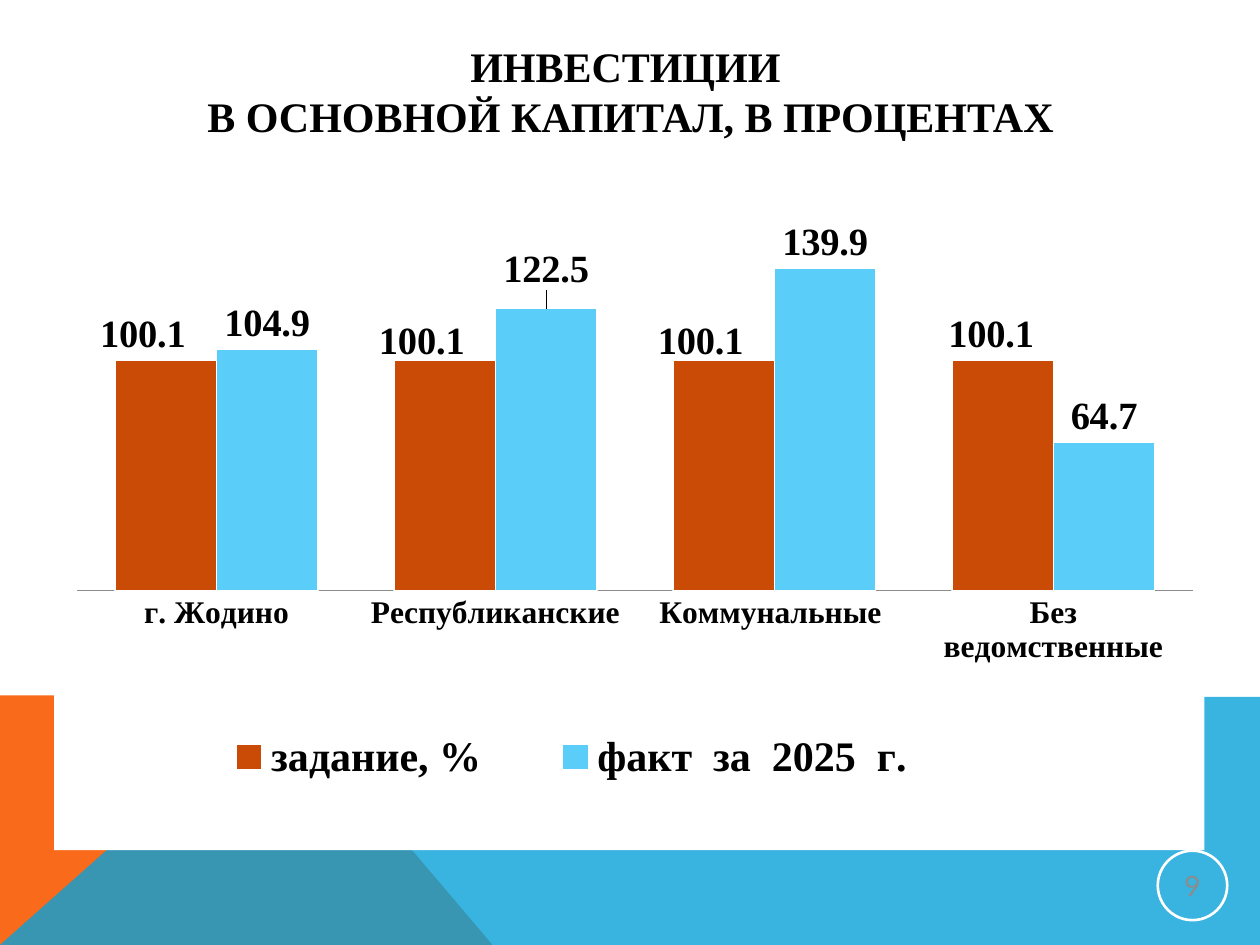
"""Build the slide on investment in fixed capital, target against actual."""
import pptx
import pptx.chart.data
import pptx.dml.color
import pptx.enum.chart
import pptx.enum.shapes
import pptx.enum.text
import pptx.oxml
import pptx.oxml.ns
import pptx.util

Cm, Pt = pptx.util.Cm, pptx.util.Pt
RGB = pptx.dml.color.RGBColor.from_string
COLORS = {"orange": "F96A1B", "blue": "08A1D9", "target": "CA4B05", "actual": "5ACEF9",
          "text": "000000", "white": "FFFFFF", "grey": "8C8C8C"}
SERIF = "Times New Roman"
NS = pptx.oxml.ns.nsdecls("c", "a")


def style(font, size, color="text", name=SERIF, bold=True):
    font.size, font.name, font.bold = Pt(size), name, bold
    font.color.rgb = RGB(COLORS[color])


def layout(x, y, w=None, h=None, target=""):
    tags = [("layoutTarget", target)] if target else []
    if w:
        tags += [("xMode", "edge"), ("yMode", "edge")]
    tags += [(t, v) for t, v in zip("xywh", (x, y, w, h)) if v is not None]
    body = "".join(f'<c:{t} val="{v}"/>' for t, v in tags)
    return pptx.oxml.parse_xml(f"<c:layout {NS}><c:manualLayout>{body}</c:manualLayout></c:layout>")


prs = pptx.Presentation()
prs.slide_width, prs.slide_height = Cm(25.4), Cm(19.05)
s = prs.slides.add_slide(prs.slide_layouts[6])

bands = [
    ("orange", [(0, 19.05), (0, 14.02), (5.66, 14.02), (9.93, 19.05)]),
    ("blue", [(0, 19.05), (5.66, 14.02), (25.4, 14.05), (25.4, 19.05)]),
]
for color, points in bands:
    points = [(Cm(x), Cm(y)) for x, y in points]
    fb = s.shapes.build_freeform(*points[0], scale=1.0)
    fb.add_line_segments(points[1:], close=True)
    sp = fb.convert_to_shape()
    sp.shadow.inherit = False
    sp.fill.solid()
    sp.fill.fore_color.rgb = RGB(COLORS[color])
    sp.line.fill.background()
    if color == "blue":
        clr = sp.fill._xPr.find(".//" + pptx.oxml.ns.qn("a:srgbClr"))
        clr.append(pptx.oxml.parse_xml(f'<a:alpha {NS} val="80000"/>'))

sp = s.shapes.add_textbox(Cm(0.41), Cm(0.33), Cm(24.61), Cm(3))
tf = sp.text_frame
tf.word_wrap = True
tf.vertical_anchor = pptx.enum.text.MSO_ANCHOR.MIDDLE
p = tf.paragraphs[0]
p.alignment = pptx.enum.text.PP_ALIGN.CENTER
for i, line in enumerate(["ИНВЕСТИЦИИ ", "В ОСНОВНОЙ КАПИТАЛ, В ПРОЦЕНТАХ"]):
    if i:
        p.add_line_break()
    r = p.add_run()
    r.text = line
    style(r.font, 24)

data = pptx.chart.data.CategoryChartData(number_format="0.0")
data.categories = ["г. Жодино", "Республиканские", "Коммунальные ", "Без ведомственные"]
data.add_series("задание, %", [100.1] * 4)
data.add_series("факт  за  2025  г.", [104.9, 122.5, 139.9, 64.7])
kind = pptx.enum.chart.XL_CHART_TYPE.COLUMN_CLUSTERED
chart = s.shapes.add_chart(kind, Cm(1.09), Cm(3.73), Cm(23.19), Cm(13.41), data).chart
style(chart.font, 18, name="Lato", bold=False)
chart.has_title = False
chart.has_legend = True
chart.legend.position = pptx.enum.chart.XL_LEGEND_POSITION.BOTTOM
chart.legend.include_in_layout = False
style(chart.legend.font, 24)

axis = chart.category_axis
axis.major_tick_mark = pptx.enum.chart.XL_TICK_MARK.NONE
axis.format.line.color.rgb = RGB(COLORS["grey"])
style(axis.tick_labels.font, 18)
axis = chart.value_axis
axis.visible = False
axis.has_major_gridlines = False
axis.minimum_scale, axis.maximum_scale, axis.major_unit = 1, 170, 10

plot = chart.plots[0]
plot.gap_width, plot.overlap = 75, 0
plot.vary_by_categories = False
outside = pptx.enum.chart.XL_LABEL_POSITION.OUTSIDE_END
shifts = [
    {0: (-0.02, 0), 1: (-0.02, 0.01), 2: (-0.02, 0.01), 3: (-0.01, 0)},
    {1: (0, -0.02)},
]
for ser, color, moved in zip(plot.series, ["target", "actual"], shifts):
    ser.format.fill.solid()
    ser.format.fill.fore_color.rgb = RGB(COLORS[color])
    ser.format.line.color.rgb = RGB(COLORS["white"])
    ser.format.line.width = Pt(0.75)
    dl = ser.data_labels
    dl.show_value = True
    dl.number_format, dl.number_format_is_linked = "0.0", False
    dl.position = outside
    style(dl.font, 22)
    for i, shift in moved.items():
        dl = ser.points[i].data_label
        dl.position = outside
        style(dl.font, 22)
        idx = ser._element.xpath(f"c:dLbls/c:dLbl/c:idx[@val='{i}']")[0]
        idx.addnext(layout(*shift))

cs = chart._chartSpace
for old in cs.xpath("c:chart/c:plotArea/c:layout | c:chart/c:legend/c:layout"):
    old.getparent().remove(old)
cs.xpath("c:chart/c:plotArea")[0].insert(0, layout(0.02, 0.02, 0.97, 0.59, "inner"))
cs.xpath("c:chart/c:legend/c:legendPos")[0].addnext(layout(0.1, 0.81, 0.7, 0.1))
cs.xpath("c:chart")[0].addnext(pptx.oxml.parse_xml(
    f'<c:spPr {NS}><a:solidFill><a:srgbClr val="{COLORS["white"]}"/></a:solidFill>'
    "<a:ln><a:noFill/></a:ln></c:spPr>"))

oval = pptx.enum.shapes.MSO_SHAPE.OVAL
sp = s.shapes.add_shape(oval, Cm(23.34), Cm(17.15), Cm(1.4), Cm(1.4))
sp.shadow.inherit = False
sp.fill.background()
sp.line.color.rgb = RGB(COLORS["white"])
sp.line.width = Pt(1.5)
tf = sp.text_frame
tf.margin_left = tf.margin_right = tf.margin_top = tf.margin_bottom = 0
tf.vertical_anchor = pptx.enum.text.MSO_ANCHOR.MIDDLE
p = tf.paragraphs[0]
p.alignment = pptx.enum.text.PP_ALIGN.CENTER
r = p.add_run()
r.text = "9"
style(r.font, 16, "grey", "Lato", False)

prs.save("out.pptx")
